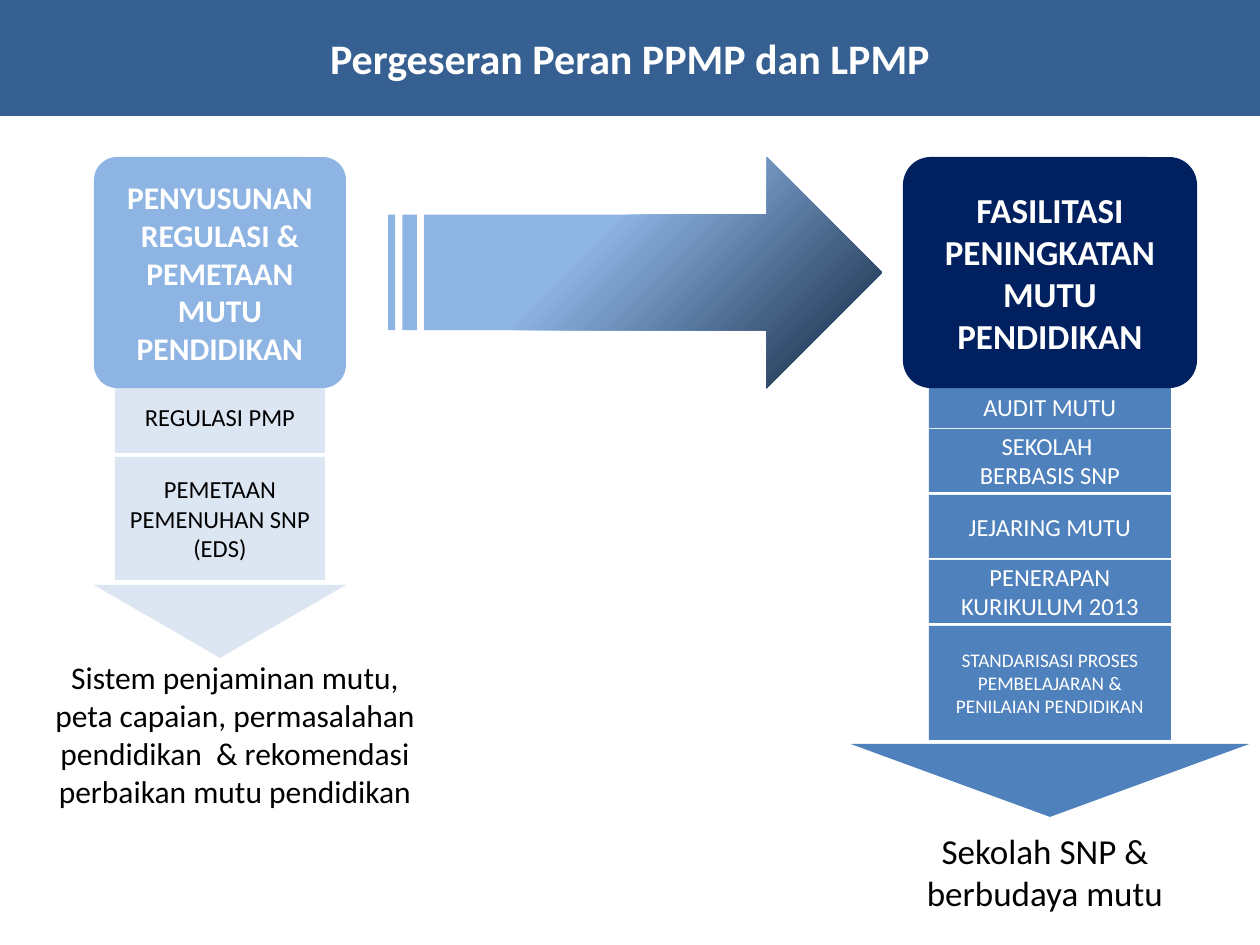
from pptx import Presentation
from pptx.dml.color import RGBColor
from pptx.enum.shapes import MSO_SHAPE
from pptx.enum.text import MSO_ANCHOR, PP_ALIGN
from pptx.util import Pt

EMU_PER_PX = 914400 / 126
WHITE, BLACK = "FFFFFF", "000000"


def px(n):
    return round(n * EMU_PER_PX)


def color(hex_string):
    return RGBColor.from_string(hex_string)


def set_attrs(obj, values):
    for name, value in values.items():
        setattr(obj, name, value)


def place(sp, x, y, w, h):
    set_attrs(sp, {"left": px(x), "top": px(y), "width": px(w), "height": px(h)})


def write(sp, text, size, hex_string, bold=False, anchor=MSO_ANCHOR.MIDDLE):
    tf = sp.text_frame
    set_attrs(tf, {"text": text, "word_wrap": True, "vertical_anchor": anchor})
    for p in tf.paragraphs:
        p.alignment = PP_ALIGN.CENTER
        for r in p.runs:
            set_attrs(r.font, {"name": "Calibri", "size": Pt(size), "bold": bold})
            r.font.color.rgb = color(hex_string)


def add_block(s, kind, box, fill=None, adjustments=()):
    sp = s.shapes.add_shape(kind, *map(px, box))
    sp.shadow.inherit = False
    sp.line.fill.background()
    for i, value in enumerate(adjustments):
        sp.adjustments[i] = value
    if fill:
        sp.fill.solid()
        sp.fill.fore_color.rgb = color(fill)
    return sp


def title_bar(s, box):
    sp = s.shapes.title
    place(sp, *box)
    sp.fill.solid()
    sp.fill.fore_color.rgb = color("376092")
    write(sp, "Pergeseran Peran PPMP dan LPMP", 24, WHITE, True)


def shift_arrow(s, box):
    sp = add_block(s, MSO_SHAPE.STRIPED_RIGHT_ARROW, box, adjustments=(0.5, 0.498))
    sp.fill.gradient()
    sp.fill.gradient_angle = 315
    stops = ((0.4, "8EB4E3"), (1, "0F243E"))
    for stop, (position, hex_string) in zip(sp.fill.gradient_stops, stops):
        stop.position = position
        stop.color.rgb = color(hex_string)


def role_column(s, box, role):
    x, y, w, h = box
    center = x + w / 2
    step_w = role["step_width"]
    for top, height, size, text in role["steps"]:
        step_box = (center - step_w / 2, y + top, step_w, height)
        sp = add_block(s, MSO_SHAPE.RECTANGLE, step_box, role["step_fill"])
        write(sp, text, size, role["step_color"])

    head = add_block(s, MSO_SHAPE.ROUNDED_RECTANGLE, box, role["head_fill"], (role["corner"],))
    write(head, role["head"], role["size"], WHITE, True)

    point_top, point_w = role["point"]
    point_box = (center - point_w / 2, y + point_top, point_w, 73)
    point = add_block(s, MSO_SHAPE.ISOSCELES_TRIANGLE, point_box, role["step_fill"])
    point._element.spPr.xfrm.set("flipV", "1")

    result_top, result_w, result_h, shift = role["result_box"]
    result = s.shapes.add_textbox(
        *map(px, (center - result_w / 2 + shift, y + result_top, result_w, result_h))
    )
    write(result, role["result"], role["size"], BLACK, anchor=MSO_ANCHOR.TOP)


OLD_ROLE = {
    "head": "PENYUSUNAN REGULASI & PEMETAAN MUTU PENDIDIKAN",
    "head_fill": "8EB4E3",
    "corner": 0.1,
    "size": 18,
    "step_width": 210,
    "step_fill": "DCE6F2",
    "step_color": BLACK,
    "steps": (
        (223, 73, 14, "REGULASI PMP"),
        (300, 123, 14, "PEMETAAN PEMENUHAN SNP\n(EDS)"),
    ),
    "point": (428, 252),
    "result_box": (495, 388, 165, 15),
    "result": "Sistem penjaminan mutu,\n"
    "peta capaian, permasalahan pendidikan  & rekomendasi perbaikan mutu pendidikan",
}

NEW_ROLE = {
    "head": "FASILITASI PENINGKATAN MUTU PENDIDIKAN",
    "head_fill": "002060",
    "corner": 0.12,
    "size": 20,
    "step_width": 242,
    "step_fill": "4F81BD",
    "step_color": WHITE,
    "steps": (
        (228, 43, 14, "AUDIT MUTU"),
        (272, 63, 14, "SEKOLAH \nBERBASIS SNP"),
        (338, 63, 14, "JEJARING MUTU"),
        (403, 63, 14, "PENERAPAN KURIKULUM 2013"),
        (469, 114, 11, "STANDARISASI PROSES PEMBELAJARAN & PENILAIAN PENDIDIKAN"),
    ),
    "point": (587, 399),
    "result_box": (666, 368, 97, -5),
    "result": "Sekolah SNP & berbudaya mutu",
}


def main():
    prs = Presentation()
    set_attrs(prs, {"slide_width": px(1260), "slide_height": px(945)})
    s = prs.slides.add_slide(prs.slide_layouts[5])
    title_bar(s, (0, -1, 1260, 117))
    shift_arrow(s, (388, 157, 494, 231))
    role_column(s, (94, 157, 252, 231), OLD_ROLE)
    role_column(s, (903, 157, 294, 231), NEW_ROLE)
    prs.save("out.pptx")


if __name__ == "__main__":
    main()
